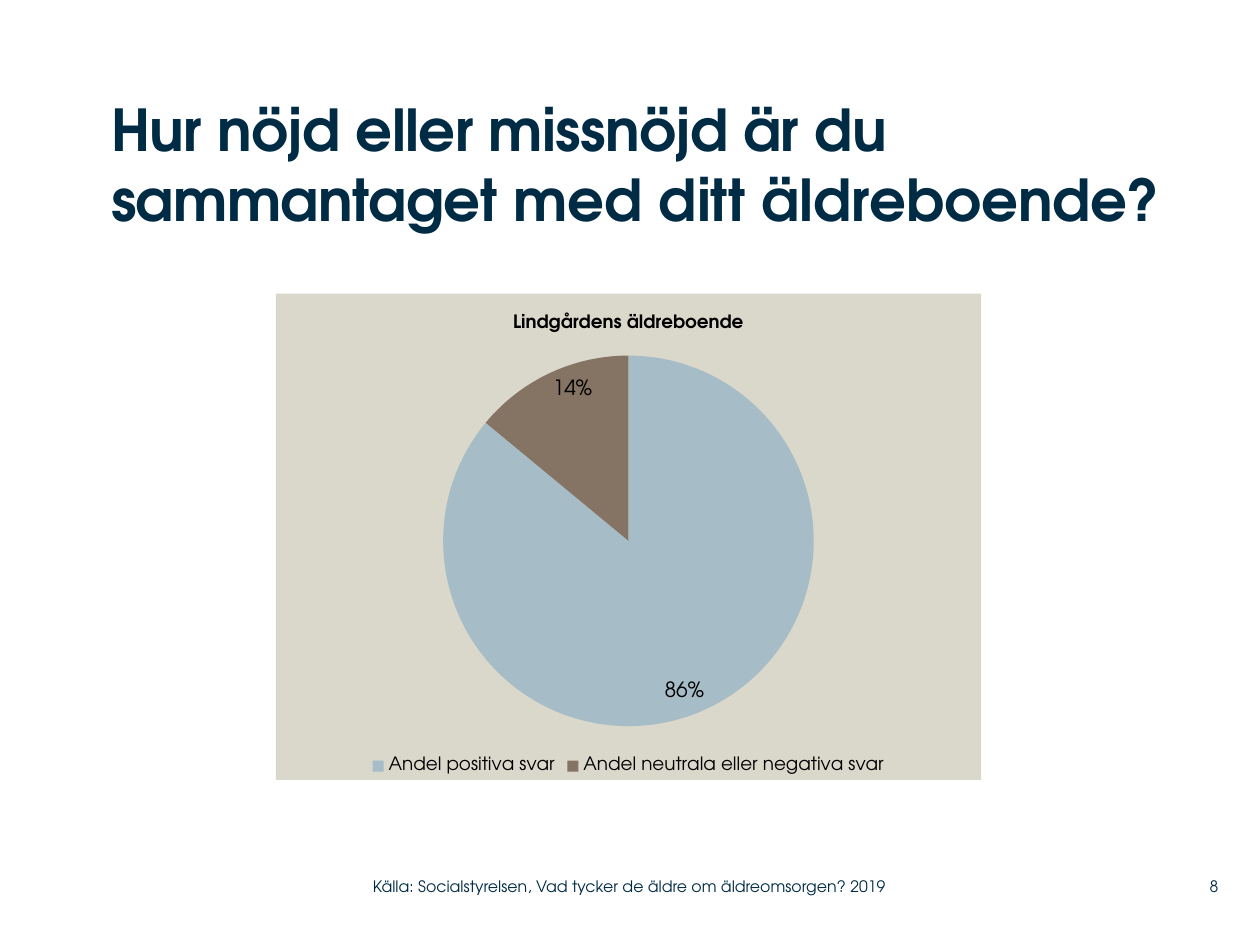
from dataclasses import dataclass

from lxml import etree
from pptx import Presentation
from pptx.chart.data import CategoryChartData
from pptx.dml.color import RGBColor
from pptx.enum.chart import XL_CHART_TYPE, XL_LABEL_POSITION, XL_LEGEND_POSITION
from pptx.enum.text import MSO_ANCHOR, PP_ALIGN
from pptx.oxml import parse_xml
from pptx.oxml.ns import nsdecls
from pptx.util import Cm, Pt

PIE = XL_CHART_TYPE.PIE
INSIDE = XL_LABEL_POSITION.INSIDE_END
BOTTOM = XL_LEGEND_POSITION.BOTTOM
TOP, MIDDLE = MSO_ANCHOR.TOP, MSO_ANCHOR.MIDDLE
LEFT, RIGHT = PP_ALIGN.LEFT, PP_ALIGN.RIGHT


@dataclass(frozen=True)
class Theme:
    face: str = "TeX Gyre Adventor"
    ink: str = "002B45"
    black: str = "000000"
    panel: str = "DAD7CB"
    slices: tuple = ("A6BCC6", "857363")
    head: float = 33
    base: float = 18
    label: float = 12
    small: float = 10.5
    foot: float = 9


def style(font, theme, size, color, bold=False):
    font.name = theme.face
    font.size = Pt(size)
    font.bold = bold
    font.color.rgb = RGBColor.from_string(color)


def write(frame, theme, *parts, size, color, bold=False, align=LEFT, anchor=MIDDLE):
    frame.word_wrap = True
    frame.vertical_anchor = anchor
    frame.margin_left = frame.margin_right = 0
    frame.margin_top = frame.margin_bottom = 0
    para = frame.paragraphs[0]
    para.alignment = align
    for text, gap in parts:
        run = para.add_run()
        run.text = text
        style(run.font, theme, size, color, bold)
        if gap:
            run.font._element.set("spc", str(int(gap * 100)))


class Page:
    def __init__(self, deck, theme):
        self.theme = theme
        self.slide = deck.slides.add_slide(deck.slide_layouts[5])

    def title(self, box, *parts):
        shape = self.slide.shapes.title
        shape.left, shape.top, shape.width, shape.height = map(Cm, box)
        write(shape.text_frame, self.theme, *parts, size=self.theme.head,
              color=self.theme.ink, bold=True, anchor=TOP)

    def note(self, box, text, align=LEFT):
        shape = self.slide.shapes.add_textbox(*map(Cm, box))
        write(shape.text_frame, self.theme, (text, 0), size=self.theme.foot,
              color=self.theme.ink, align=align)

    def pie(self, box, name, shares):
        theme = self.theme
        data = CategoryChartData()
        data.categories = list(shares)
        data.add_series("Series 1", list(shares.values()))
        chart = self.slide.shapes.add_chart(PIE, *map(Cm, box), data).chart
        style(chart.font, theme, theme.base, theme.black)

        chart.has_title = True
        frame = chart.chart_title.text_frame
        frame.text = name
        style(frame.paragraphs[0].runs[0].font, theme, theme.small, theme.black, True)
        chart.chart_title.include_in_layout = False

        chart.has_legend = True
        chart.legend.position = BOTTOM
        chart.legend.include_in_layout = False
        style(chart.legend.font, theme, theme.small, theme.black)

        plot = chart.plots[0]
        plot.vary_by_categories = True
        for spot, color in enumerate(theme.slices):
            point = plot.series[0].points[spot].format
            point.fill.solid()
            point.fill.fore_color.rgb = RGBColor.from_string(color)
            point.line.fill.background()
        plot.has_data_labels = True
        labels = plot.data_labels
        labels.show_percentage = True
        labels.show_value = False
        labels.number_format = "0%"
        labels.number_format_is_linked = False
        labels.position = INSIDE
        style(labels.font, theme, theme.label, theme.black)
        self.back(chart, theme.panel)

    def back(self, chart, color):
        props = parse_xml(f'<c:spPr {nsdecls("c", "a")}/>')
        fill = etree.SubElement(props, "{%s}solidFill" % props.nsmap["a"])
        etree.SubElement(fill, "{%s}srgbClr" % props.nsmap["a"], val=color)
        line = etree.SubElement(props, "{%s}ln" % props.nsmap["a"])
        etree.SubElement(line, "{%s}noFill" % props.nsmap["a"])
        chart.element.find("{%s}chart" % props.nsmap["c"]).addnext(props)


def main():
    deck = Presentation()
    deck.slide_width, deck.slide_height = Cm(25.4), Cm(19.05)
    page = Page(deck, Theme())
    page.title((2.24, 1.9, 22.43, 3.6),
               ("Hur nöjd eller missnöjd är du sammantaget ", -0.3),
               ("med ditt äldreboende?", 0))
    page.pie((5.56, 5.92, 14.22, 9.8), "Lindgårdens äldreboende",
             {"Andel positiva svar": 86, "Andel neutrala eller negativa svar": 14})
    page.note((7.52, 17.5, 11.25, 0.74),
              "Källa: Socialstyrelsen, Vad tycker de äldre om äldreomsorgen? 2019")
    page.note((23.37, 17.5, 1.19, 0.74), "8", RIGHT)
    deck.save("out.pptx")


if __name__ == "__main__":
    main()
